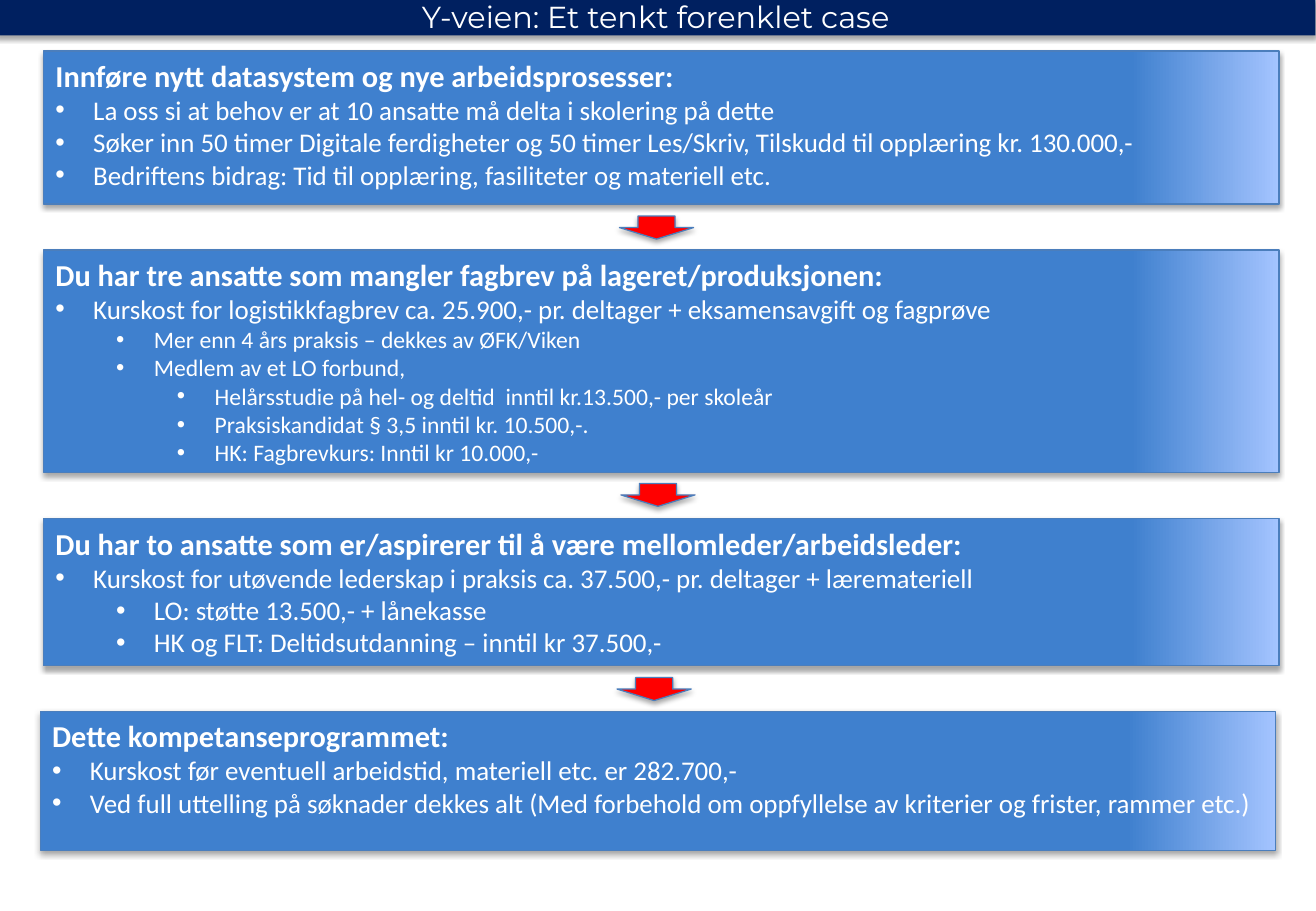
"""Builds the Y-veien case slide: a title bar and four steps joined by down arrows."""
from lxml import etree
from pptx import Presentation
from pptx.dml.color import RGBColor
from pptx.enum.shapes import MSO_SHAPE
from pptx.enum.text import MSO_ANCHOR, PP_ALIGN
from pptx.oxml.ns import qn
from pptx.util import Cm, Pt

RECT, DOWN_ARROW = MSO_SHAPE.RECTANGLE, MSO_SHAPE.DOWN_ARROW
TOP, MIDDLE = MSO_ANCHOR.TOP, MSO_ANCHOR.MIDDLE
LEFT, CENTER = PP_ALIGN.LEFT, PP_ALIGN.CENTER

NAVY = RGBColor(0x00, 0x20, 0x60)
BLUE = RGBColor(0x3F, 0x80, 0xCE)
PALE_BLUE = RGBColor(0xA4, 0xC4, 0xFF)
OUTLINE = RGBColor(0x4B, 0x7E, 0xBC)
RED = RGBColor(0xFF, 0x00, 0x00)
WHITE = RGBColor(0xFF, 0xFF, 0xFF)
BLACK = RGBColor(0x00, 0x00, 0x00)

BOX_WIDTH = 25.83
ARROW_WIDTH, ARROW_HEIGHT = 1.55, 0.48
HANGING, LEVEL_STEP = 0.79, 1.27

STEPS = [
    (0.91, 1.07, 3.2, "Innføre nytt datasystem og nye arbeidsprosesser:", [
        (0, 16, "La oss si at behov er at 10 ansatte må delta i skolering på dette"),
        (0, 16, "Søker inn 50 timer Digitale ferdigheter og 50 timer Les/Skriv, "
                "Tilskudd til opplæring kr. 130.000,-"),
        (0, 16, "Bedriftens bidrag: Tid til opplæring, fasiliteter og materiell etc."),
    ]),
    (0.91, 5.23, 4.65, "Du har tre ansatte som mangler fagbrev på lageret/produksjonen:", [
        (0, 16, "Kurskost for logistikkfagbrev ca. 25.900,- pr. deltager + "
                "eksamensavgift og fagprøve"),
        (1, 14, "Mer enn 4 års praksis – dekkes av ØFK/Viken"),
        (1, 14, "Medlem av et LO forbund,"),
        (2, 14, "Helårsstudie på hel- og deltid  inntil kr.13.500,- per skoleår"),
        (2, 14, "Praksiskandidat § 3,5 inntil kr. 10.500,-."),
        (2, 14, "HK: Fagbrevkurs: Inntil kr 10.000,-"),
    ]),
    (0.91, 10.85, 3.07, "Du har to ansatte som er/aspirerer til å være mellomleder/arbeidsleder:", [
        (0, 16, "Kurskost for utøvende lederskap i praksis ca. 37.500,- pr. deltager + "
                "læremateriell"),
        (1, 16, "LO: støtte 13.500,- + lånekasse"),
        (1, 16, "HK og FLT: Deltidsutdanning – inntil kr 37.500,-"),
    ]),
    (0.84, 14.88, 2.9, "Dette kompetanseprogrammet:", [
        (0, 16, "Kurskost før eventuell arbeidstid, materiell etc. er 282.700,-"),
        (0, 16, "Ved full uttelling på søknader dekkes alt (Med forbehold om oppfyllelse "
                "av kriterier og frister, rammer etc.)"),
    ]),
]
ARROWS = [(12.95, 4.52), (12.98, 10.11), (12.9, 14.17)]


def add_shadowed(kind, left, top, width, height):
    s = slide.shapes.add_shape(kind, Cm(left), Cm(top), Cm(width), Cm(height))
    s.line.color.rgb = OUTLINE
    s.line.width = Pt(0.75)
    s.shadow.inherit = False
    effects = s._element.spPr.find(qn("a:effectLst"))
    shadow = etree.SubElement(effects, qn("a:outerShdw"), blurRad=str(Pt(3.1)),
                              dist=str(Pt(1.8)), dir="5400000", rotWithShape="0")
    color = etree.SubElement(shadow, qn("a:srgbClr"), val=str(BLACK))
    etree.SubElement(color, qn("a:alpha"), val="35000")
    return s


def format_text(p, align, font, size, bold=False):
    p.alignment = align
    for r in p.runs:
        r.font.name = font
        r.font.size = Pt(size)
        r.font.bold = bold
        r.font.color.rgb = WHITE


prs = Presentation()
prs.slide_width, prs.slide_height = Cm(27.51), Cm(19.05)
slide = prs.slides.add_slide(prs.slide_layouts[6])

bar = add_shadowed(RECT, -0.08, -0.05, 27.58, 0.79)
bar.fill.solid()
bar.fill.fore_color.rgb = NAVY
bar.line.fill.background()
tf = bar.text_frame
tf.vertical_anchor = MIDDLE
tf.text = "Y-veien: Et tenkt forenklet case"
format_text(tf.paragraphs[0], CENTER, "Montserrat", 18)

for left, top, height, heading, bullets in STEPS:
    box = add_shadowed(RECT, left, top, BOX_WIDTH, height)
    box.fill.gradient()
    box.fill.gradient_angle = 0
    for stop, position, color in zip(box.fill.gradient_stops, (0.88, 1), (BLUE, PALE_BLUE)):
        stop.position = position
        stop.color.rgb = color
    tf = box.text_frame
    tf.word_wrap = True
    tf.vertical_anchor = TOP
    tf.text = heading
    format_text(tf.paragraphs[0], LEFT, "Calibri", 18, True)
    for level, size, text in bullets:
        p = tf.add_paragraph()
        p.text = text
        p.level = level
        pPr = p._p.get_or_add_pPr()
        pPr.set("marL", str(Cm(HANGING + level * LEVEL_STEP)))
        pPr.set("indent", str(Cm(-HANGING)))
        etree.SubElement(pPr, qn("a:buFont"), typeface="Arial")
        etree.SubElement(pPr, qn("a:buChar"), char="•")
        format_text(p, LEFT, "Calibri", size)

for left, top in ARROWS:
    arrow = add_shadowed(DOWN_ARROW, left, top, ARROW_WIDTH, ARROW_HEIGHT)
    arrow.fill.solid()
    arrow.fill.fore_color.rgb = RED

prs.save("out.pptx")
